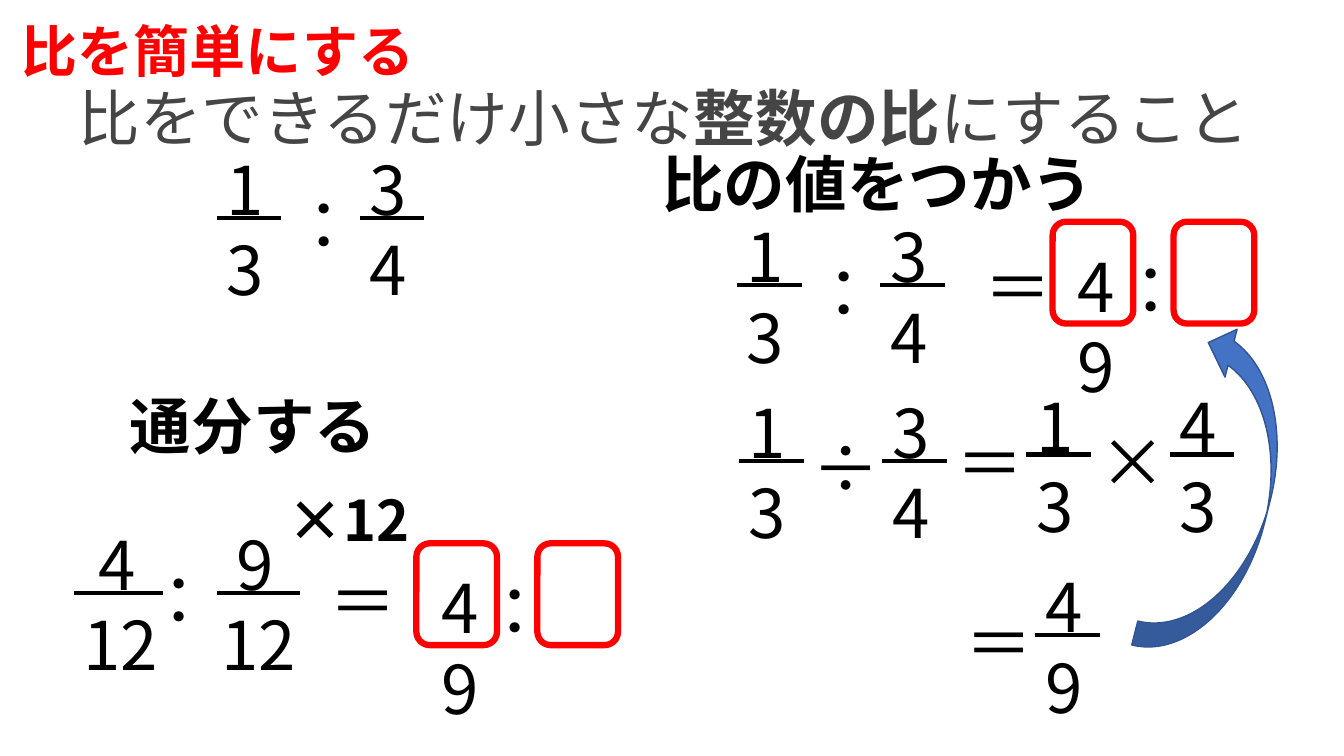
"""Build a slide on simplifying ratios of fractions."""
from dataclasses import dataclass

from lxml import etree
from pptx import Presentation
from pptx.dml.color import RGBColor
from pptx.enum.shapes import MSO_CONNECTOR, MSO_SHAPE
from pptx.oxml.ns import qn
from pptx.util import Inches, Pt

STRAIGHT = MSO_CONNECTOR.STRAIGHT
ROUNDED = MSO_SHAPE.ROUNDED_RECTANGLE
CURVED_ARROW = MSO_SHAPE.CURVED_LEFT_ARROW


@dataclass(frozen=True)
class Theme:
    font: str = "Noto Sans CJK JP"
    subtitle_font: str = "Open Sans"
    ink: str = "000000"
    grey: str = "454545"
    red: str = "FF0000"
    white: str = "FFFFFF"
    blue: str = "4472C4"
    dark_blue: str = "325491"
    title: int = 40
    heading: int = 44
    digit: int = 48
    bar: float = 3
    frame: float = 4.5
    outline: float = 1


THEME = Theme()
SLIDE_W, SLIDE_H = 13.33, 7.5

HEADINGS = [
    ((0.12, 0.07, 5.63, 0.77), "比を簡単にする", THEME.title, THEME.red),
    ((1.19, 3.74, 3.14, 0.84), "通分する", THEME.heading, THEME.ink),
    ((6.47, 1.34, 5.64, 0.84), "比の値をつかう", THEME.heading, THEME.ink),
    ((2.75, 4.72, 1.55, 0.77), "×12", THEME.title, THEME.ink),
]
SUBTITLE_AT = (0.68, 0.69, 12.08, 0.84)
SUBTITLE = [("比をできるだけ小さな", False), ("整数の比", True), ("にすること", False)]

PAIRS = [
    ((2.15, 1.36), "1\n3", "：", "3\n4"),
    ((7.31, 2.03), "1\n3", "：", "3\n4"),
    ((7.33, 3.77), "1\n3", "÷", "3\n4"),
    ((10.18, 3.71), "1\n3", "×", "4\n3"),
]
TWELFTHS = [((0.73, 5.08), " 4\n12", 0, 0.89), ((2.1, 5.08), " 9\n12", 0.05, 0.83)]
TWELFTHS_COLON = (1.35, 5.43)
RATIO_VALUE = ((10.27, 5.5), "4\n9")
EQUALS = [(3.17, 5.44), (9.67, 2.33), (9.39, 4.07), (9.48, 5.86)]
ANSWER = "4\n9"
ANSWERS_AT = [(4.13, 5.39), (10.44, 2.2)]
ARROW_AT, ARROW_TURN = (11.62, 3.23, 0.98, 3.34), 14.2

PITCH = 1.42
DIGIT_W, STACK_H, BAR_DROP = 0.64, 1.72, 0.8
SIGN_W, SIGN_H = 0.8, 0.91
SIGN_DX, SIGN_DY = 0.63, 0.35
FRAME_W, FRAME_H, FRAME_PITCH = 0.8, 1.01, 1.2
LINE_RATIO, BASELINE_SHIFT = 1.2, 0.088


def rgb(code):
    return RGBColor.from_string(code)


def inches(values):
    return [Inches(value) for value in values]


def add_text(slide, at, text, size, color=THEME.ink, bold=False, font=THEME.font):
    box = slide.shapes.add_textbox(*inches(at))
    frame = box.text_frame
    frame.word_wrap = True
    frame.margin_top = Inches(0.05 + BASELINE_SHIFT * size / 72)
    frame.text = text
    for paragraph in frame.paragraphs:
        paragraph.line_spacing = Pt(size * LINE_RATIO)
        for run in paragraph.runs:
            style_run(run, size, color, bold, font)
    return frame


def style_run(run, size, color, bold, font):
    run.font.size = Pt(size)
    run.font.bold = bold
    run.font.name = font
    run.font.color.rgb = rgb(color)
    east_asian = etree.SubElement(run.font._element, qn("a:ea"))
    east_asian.set("typeface", THEME.font)


def add_subtitle(slide):
    (first, bold), *rest = SUBTITLE
    style = (THEME.heading, THEME.grey)
    frame = add_text(slide, SUBTITLE_AT, first, *style, bold, THEME.subtitle_font)
    for text, bold in rest:
        run = frame.paragraphs[0].add_run()
        run.text = text
        style_run(run, *style, bold, THEME.subtitle_font)


def add_sign(slide, x, y, sign):
    add_text(slide, (x, y, SIGN_W, SIGN_H), sign, THEME.digit)


def add_fraction(slide, x, y, digits, width=DIGIT_W, bar_dx=0, bar_w=DIGIT_W):
    add_text(slide, (x, y, width, STACK_H), digits, THEME.digit)
    left, level = x + bar_dx, y + BAR_DROP
    bar = slide.shapes.add_connector(
        STRAIGHT, *inches((left, level, left + bar_w, level)))
    bar.line.color.rgb = rgb(THEME.ink)
    bar.line.width = Pt(THEME.bar)
    etree.SubElement(bar._element.spPr, qn("a:effectLst"))


def add_outlined(slide, kind, at, fill, line, weight):
    shape = slide.shapes.add_shape(kind, *inches(at))
    shape.shadow.inherit = False
    shape.fill.solid()
    shape.fill.fore_color.rgb = rgb(fill)
    shape.line.color.rgb = rgb(line)
    shape.line.width = Pt(weight)
    return shape


def add_answer(slide, x, y):
    for column in range(2):
        at = (x + column * FRAME_PITCH, y, FRAME_W, FRAME_H)
        add_outlined(slide, ROUNDED, at, THEME.white, THEME.red, THEME.frame)
    add_sign(slide, x + 0.55, y + 0.15, "：")
    add_text(slide, (x + 0.15, y + 0.12, 1.84, STACK_H), ANSWER, THEME.digit)


def main():
    deck = Presentation()
    deck.slide_width, deck.slide_height = inches((SLIDE_W, SLIDE_H))
    slide = deck.slides.add_slide(deck.slide_layouts[6])

    for at, text, size, color in HEADINGS:
        add_text(slide, at, text, size, color, bold=True)
    add_subtitle(slide)

    for (x, y), first, sign, second in PAIRS:
        add_fraction(slide, x, y, first)
        add_sign(slide, x + SIGN_DX, y + SIGN_DY, sign)
        add_fraction(slide, x + PITCH, y, second)
    for (x, y), digits, bar_dx, bar_w in TWELFTHS:
        add_fraction(slide, x, y, digits, 1.13, bar_dx, bar_w)
    add_sign(slide, *TWELFTHS_COLON, "：")
    value_at, value = RATIO_VALUE
    add_fraction(slide, *value_at, value)
    for x, y in EQUALS:
        add_sign(slide, x, y, "＝")

    arrow = add_outlined(slide, CURVED_ARROW, ARROW_AT,
                         THEME.blue, THEME.dark_blue, THEME.outline)
    arrow.rotation = ARROW_TURN
    arrow._element.spPr.find(qn("a:xfrm")).set("flipV", "1")
    for x, y in ANSWERS_AT:
        add_answer(slide, x, y)
    deck.save("out.pptx")


if __name__ == "__main__":
    main()
